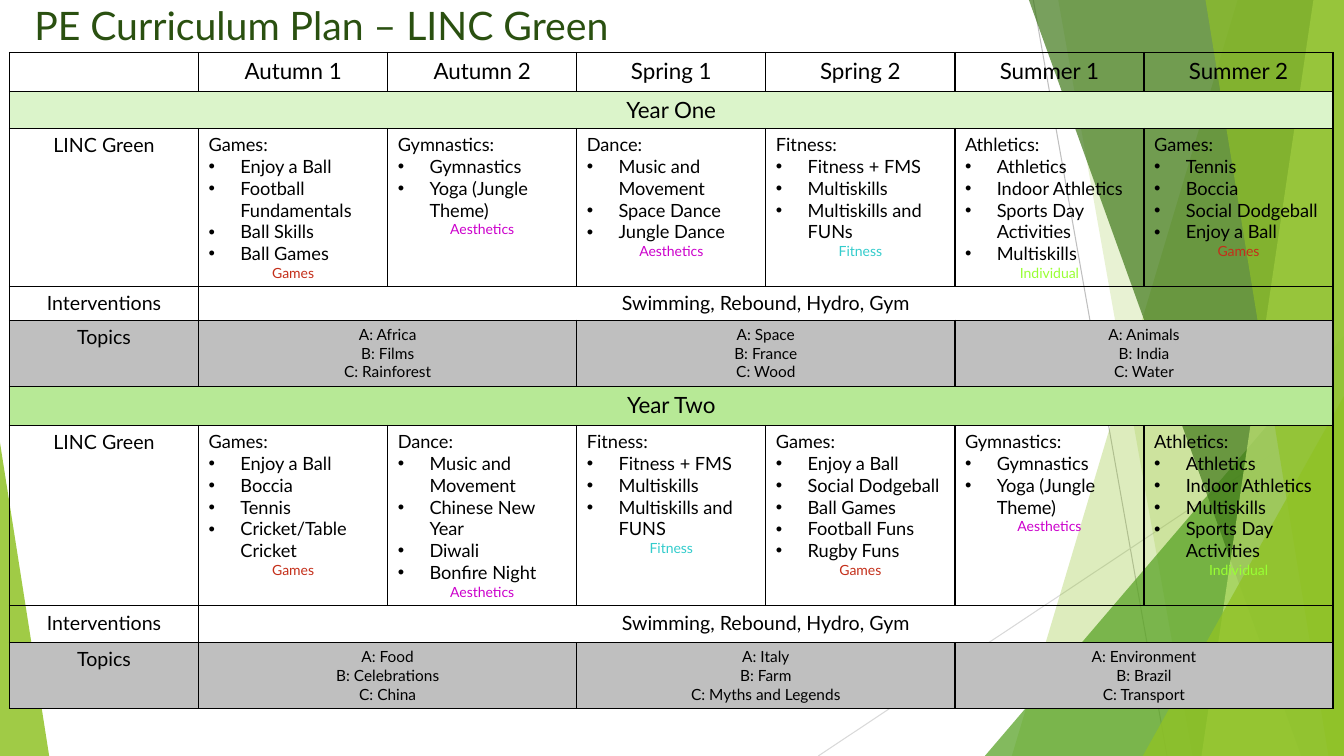
from dataclasses import dataclass

from lxml import etree
from pptx import Presentation
from pptx.dml.color import RGBColor
from pptx.enum.shapes import MSO_CONNECTOR, MSO_SHAPE
from pptx.enum.text import MSO_ANCHOR, PP_ALIGN
from pptx.oxml import parse_xml
from pptx.oxml.ns import nsdecls, qn
from pptx.util import Cm, Pt

LEFT, CENTER = PP_ALIGN.LEFT, PP_ALIGN.CENTER
TOP = MSO_ANCHOR.TOP
TRIANGLE = MSO_SHAPE.ISOSCELES_TRIANGLE
STRAIGHT = MSO_CONNECTOR.STRAIGHT
WIDTH, HEIGHT = 33.87, 19.05


@dataclass(frozen=True)
class Theme:
    font: str = "Lato"
    title: str = "2A5010"
    text: str = "000000"
    border: str = "000000"
    topics: str = "BFBFBF"
    lime: str = "90C226"
    pale_lime: str = "C0E474"
    leaf: str = "54A021"
    forest: str = "3F7819"
    title_size: float = 28
    header_size: float = 16
    label_size: float = 14
    unit_size: float = 13
    topic_size: float = 11
    tag_size: float = 10


THEME = Theme()
TAG_COLORS = {"Games": "C42F1A", "Aesthetics": "CC00CC",
              "Fitness": "33CCCC", "Individual": "99FF33"}
TERMS = ["Autumn 1", "Autumn 2", "Spring 1", "Spring 2", "Summer 1", "Summer 2"]
ROW_HEIGHTS = [0.99, 0.93, 3.98, 0.83, 1.66, 0.99, 4.54, 0.93, 1.66]

# Each year: name, band colour, units (heading, activities, tag), topics per season
YEARS = [
    ("Year One", "DBF4CA", [
        ("Games:", ["Enjoy a Ball", "Football Fundamentals", "Ball Skills", "Ball Games"], "Games"),
        ("Gymnastics:", ["Gymnastics", "Yoga (Jungle Theme)"], "Aesthetics"),
        ("Dance:", ["Music and Movement", "Space Dance", "Jungle Dance"], "Aesthetics"),
        ("Fitness:", ["Fitness + FMS", "Multiskills", "Multiskills and FUNs"], "Fitness"),
        ("Athletics:", ["Athletics", "Indoor Athletics", "Sports Day Activities",
                        "Multiskills"], "Individual"),
        ("Games:", ["Tennis", "Boccia", "Social Dodgeball", "Enjoy a Ball"], "Games"),
    ], [["A: Africa", "B: Films", "C: Rainforest"],
        ["A: Space", "B: France", "C: Wood"],
        ["A: Animals", "B: India", "C: Water"]]),
    ("Year Two", "B7E996", [
        ("Games:", ["Enjoy a Ball", "Boccia", "Tennis", "Cricket/Table Cricket"], "Games"),
        ("Dance:", ["Music and Movement", "Chinese New Year", "Diwali", "Bonfire Night"],
         "Aesthetics"),
        ("Fitness:", ["Fitness + FMS", "Multiskills", "Multiskills and FUNS"], "Fitness"),
        ("Games:", ["Enjoy a Ball", "Social Dodgeball", "Ball Games", "Football Funs",
                    "Rugby Funs"], "Games"),
        ("Gymnastics:", ["Gymnastics", "Yoga (Jungle Theme)"], "Aesthetics"),
        ("Athletics:", ["Athletics", "Indoor Athletics", "Multiskills",
                        "Sports Day Activities"], "Individual"),
    ], [["A: Food", "B: Celebrations", "C: China"],
        ["A: Italy", "B: Farm", "C: Myths and Legends"],
        ["A: Environment", "B: Brazil", "C: Transport"]]),
]


# Background facets
def paint(shape, color, opacity):
    shape.shadow.inherit = False
    shape.line.fill.background()
    shape.fill.solid()
    shape.fill.fore_color.rgb = RGBColor.from_string(color)
    tint = shape.fill._xPr.find(qn("a:solidFill"))[0]
    etree.SubElement(tint, qn("a:alpha")).set("val", str(opacity * 1000))


def add_ray(page, x1, y1, x2, y2, color):
    ray = page.shapes.add_connector(STRAIGHT, Cm(x1), Cm(y1), Cm(x2), Cm(y2))
    ray.line.color.rgb = RGBColor.from_string(color)
    ray.line.width = Pt(0.75)
    etree.SubElement(ray.element.spPr, qn("a:effectLst"))


def add_facet(page, top_x, bottom_x, color, opacity):
    """A panel from a slanted left side to the right edge of the slide."""
    builder = page.shapes.build_freeform(Cm(top_x), 0)
    corners = [(WIDTH, 0), (WIDTH, HEIGHT), (bottom_x, HEIGHT)]
    builder.add_line_segments([(Cm(x), Cm(y)) for x, y in corners])
    paint(builder.convert_to_shape(), color, opacity)


def add_corner(page, left, top, width, apex, color, opacity):
    """A right triangle standing on the bottom edge of the slide."""
    corner = page.shapes.add_shape(TRIANGLE, Cm(left), Cm(top), Cm(width), Cm(HEIGHT - top))
    corner.adjustments[0] = apex
    paint(corner, color, opacity)


def add_background(page):
    add_ray(page, 26.04, 0, 29.41, HEIGHT, "BFBFBF")
    add_ray(page, WIDTH, 10.24, 20.62, HEIGHT, "D9D9D9")
    add_facet(page, 31.19, 25.5, THEME.lime, 30)
    add_facet(page, 26.67, 30.05, THEME.lime, 20)
    add_corner(page, 24.82, 8.46, 9.05, 1, THEME.leaf, 72)
    add_facet(page, 25.93, 32.79, THEME.forest, 70)
    add_facet(page, 33.1, 30.28, THEME.pale_lime, 70)
    add_facet(page, 30.38, 33.48, THEME.lime, 65)
    add_corner(page, 28.8, 9.98, 5.07, 1, THEME.lime, 80)
    add_corner(page, 0, 11.15, 1.24, 0, THEME.lime, 85)


# Text
def add_para(frame, text, size, color=THEME.text, align=CENTER, bullet=False):
    first = frame.paragraphs[0]
    para = frame.add_paragraph() if first.runs else first
    para.alignment = align
    if bullet:
        props = para._p.get_or_add_pPr()
        props.set("marL", str(Cm(0.8)))
        props.set("indent", str(-Cm(0.8)))
        etree.SubElement(props, qn("a:buFont")).set("typeface", "Arial")
        etree.SubElement(props, qn("a:buChar")).set("char", "•")
    span = para.add_run()
    span.text = text
    span.font.name = THEME.font
    span.font.size = Pt(size)
    span.font.color.rgb = RGBColor.from_string(color)


def add_title(page, text):
    title = page.shapes.title
    title.left, title.top, title.width, title.height = Cm(0.61), Cm(-0.1), Cm(32.64), Cm(1.9)
    title.text_frame.vertical_anchor = TOP
    add_para(title.text_frame, text, THEME.title_size, THEME.title, LEFT)
    title.element.getparent().append(title.element)  # in front of the facets


# Table
def style_cell(cell, fill=None):
    props = cell._tc.get_or_add_tcPr()
    for side in "LRTB":
        props.append(parse_xml(
            f'<a:ln{side} {nsdecls("a")} w="12700"><a:solidFill>'
            f'<a:srgbClr val="{THEME.border}"/></a:solidFill></a:ln{side}>'))
    if fill:
        cell.fill.solid()
        cell.fill.fore_color.rgb = RGBColor.from_string(fill)
    else:
        cell.fill.background()


def fill_row(table, row, entries, size, fill=None):
    """Spread entries of (columns spanned, lines, size) across one row."""
    for cell in table.rows[row].cells:
        style_cell(cell, fill)
    column = 0
    for span_count, lines in entries:
        cell = table.cell(row, column)
        if span_count > 1:
            cell.merge(table.cell(row, column + span_count - 1))
        for line in lines:
            add_para(cell.text_frame, line, size if column else max(size, THEME.label_size))
        column += span_count


def add_unit(cell, heading, activities, tag):
    add_para(cell.text_frame, heading, THEME.unit_size, align=LEFT)
    for activity in activities:
        add_para(cell.text_frame, activity, THEME.unit_size, align=LEFT, bullet=True)
    add_para(cell.text_frame, tag, THEME.tag_size, TAG_COLORS[tag])


def add_year(table, row, name, band, units, topics):
    fill_row(table, row, [(7, [name])], THEME.header_size, band)
    fill_row(table, row + 1, [(1, ["LINC Green"])], THEME.label_size)
    for column, unit in enumerate(units, 1):
        add_unit(table.cell(row + 1, column), *unit)
    fill_row(table, row + 2, [(1, ["Interventions"]), (6, ["Swimming, Rebound, Hydro, Gym"])],
             THEME.label_size)
    seasons = [(2, lines) for lines in topics]
    fill_row(table, row + 3, [(1, ["Topics"])] + seasons, THEME.topic_size, THEME.topics)


def add_plan(page):
    table = page.shapes.add_table(len(ROW_HEIGHTS), 7, Cm(0.24), Cm(1.32),
                                  Cm(33.36), Cm(sum(ROW_HEIGHTS))).table
    table.first_row = table.horz_banding = False
    for row, height in zip(table.rows, ROW_HEIGHTS):
        row.height = Cm(height)
    fill_row(table, 0, [(1, [text]) for text in ["", *TERMS]], THEME.header_size)
    for index, year in enumerate(YEARS):
        add_year(table, 1 + 4 * index, *year)


def main():
    deck = Presentation()
    deck.slide_width, deck.slide_height = Cm(WIDTH), Cm(HEIGHT)
    page = deck.slides.add_slide(deck.slide_layouts[5])
    add_background(page)
    add_title(page, "PE Curriculum Plan – LINC Green")
    add_plan(page)
    deck.save("out.pptx")


if __name__ == "__main__":
    main()
